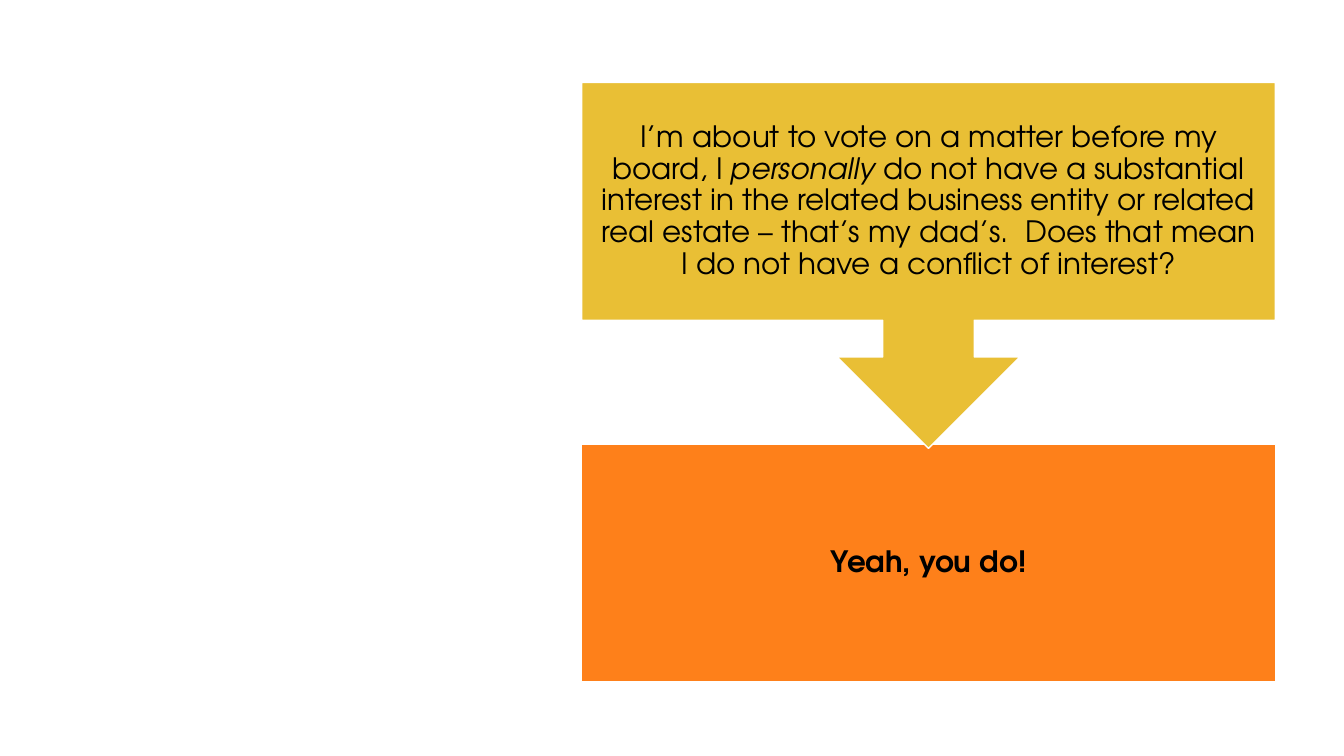
import pptx
import pptx.util
import pptx.dml.color
import pptx.enum.shapes
import pptx.enum.text

Cm = pptx.util.Cm
RGBColor = pptx.dml.color.RGBColor
Shapes = pptx.enum.shapes.MSO_SHAPE

GOLD = RGBColor(0xE9, 0xBF, 0x35)
ORANGE = RGBColor(0xFE, 0x80, 0x1A)
WHITE = RGBColor(0xFF, 0xFF, 0xFF)
BLACK = RGBColor(0x00, 0x00, 0x00)
FONT = "TeX Gyre Adventor"

QUESTION = [
    ("I’m about to vote on a matter before my board, I ", False),
    ("personally", True),
    (" do not have a substantial interest in the related business entity "
     "or related real estate – that’s my dad’s.  Does that mean I do not "
     "have a conflict of interest?", False),
]
ANSWER = "Yeah, you do!"


def add_panel(slide, preset, box, fill):
    panel = slide.shapes.add_shape(preset, *box)
    panel.shadow.inherit = False
    panel.fill.solid()
    panel.fill.fore_color.rgb = fill
    panel.line.color.rgb = WHITE
    panel.line.width = pptx.util.Pt(1)
    frame = panel.text_frame
    frame.word_wrap = True
    frame.vertical_anchor = pptx.enum.text.MSO_ANCHOR.MIDDLE
    frame.margin_left = frame.margin_right = Cm(0.41)
    frame.margin_top = frame.margin_bottom = Cm(0.41)
    return frame


def format_paragraph(paragraph):
    paragraph.alignment = pptx.enum.text.PP_ALIGN.CENTER
    paragraph.line_spacing = 0.9
    for run in paragraph.runs:
        run.font.name = FONT
        run.font.size = pptx.util.Pt(21)
        run.font.color.rgb = BLACK


def add_question(slide, box):
    frame = add_panel(slide, Shapes.DOWN_ARROW_CALLOUT, box, GOLD)
    wording = frame.paragraphs[0]
    for text, italic in QUESTION:
        run = wording.add_run()
        run.text = text
        run.font.italic = italic
    format_paragraph(wording)


def add_answer(slide, box):
    frame = add_panel(slide, Shapes.RECTANGLE, box, ORANGE)
    frame.text = ANSWER
    wording = frame.paragraphs[0]
    format_paragraph(wording)
    wording.runs[0].font.bold = True


def add_question_and_answer(slide, left, top, width, height):
    answer_height = Cm(5.99)
    question_height = Cm(9.22)
    add_answer(slide, (left, top + height - answer_height, width, answer_height))
    add_question(slide, (left, top, width, question_height))


def main():
    deck = pptx.Presentation()
    deck.slide_width = Cm(33.87)
    deck.slide_height = Cm(19.05)
    slide = deck.slides.add_slide(deck.slide_layouts[6])
    add_question_and_answer(slide, Cm(14.66), Cm(2.08), Cm(17.48), Cm(15.11))
    deck.save("out.pptx")


if __name__ == "__main__":
    main()
